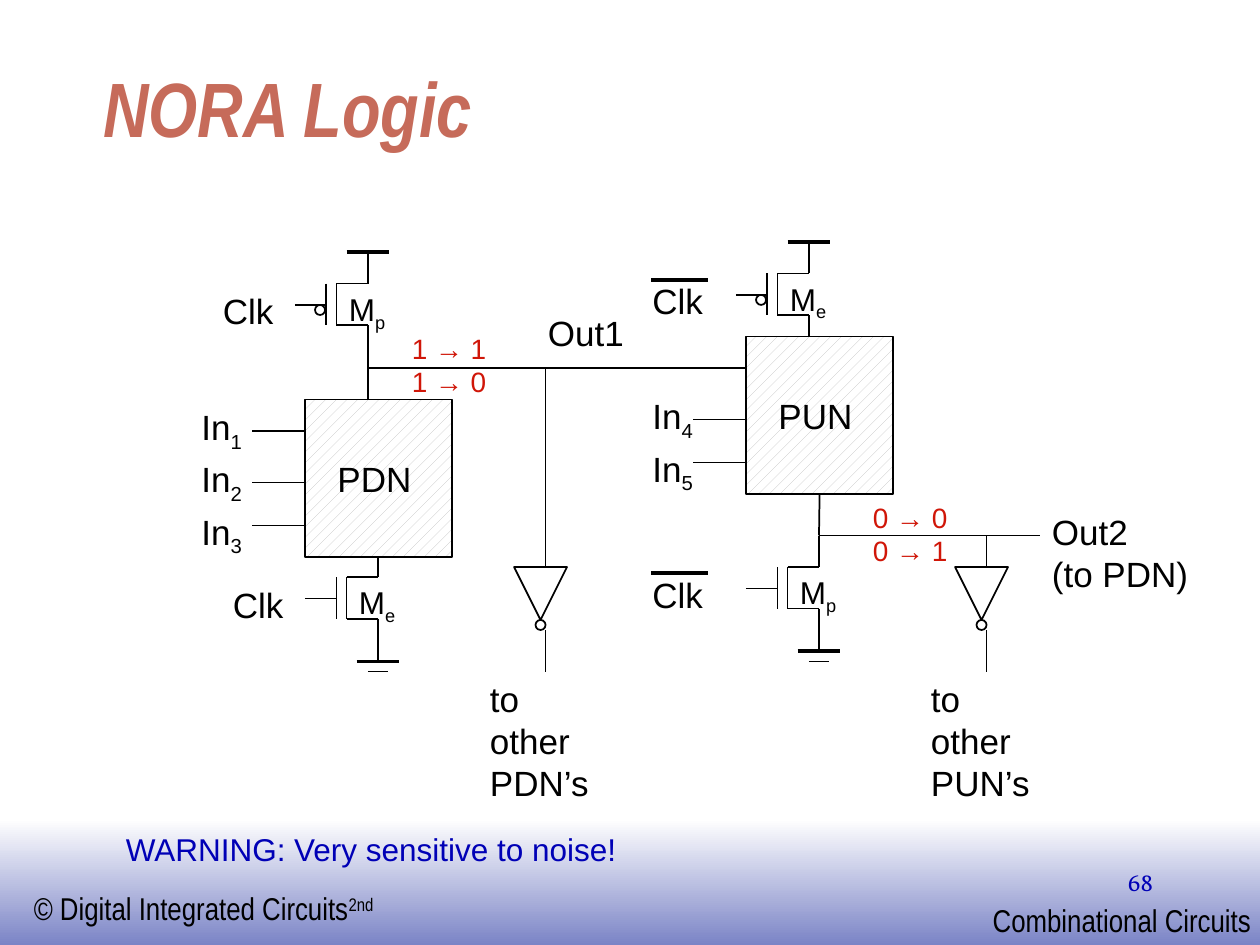
from dataclasses import dataclass

from lxml import etree
from pptx import Presentation
from pptx.dml.color import RGBColor
from pptx.enum.dml import MSO_PATTERN
from pptx.enum.shapes import MSO_CONNECTOR, MSO_SHAPE
from pptx.enum.text import MSO_ANCHOR, MSO_AUTO_SIZE, PP_ALIGN
from pptx.oxml.ns import qn
from pptx.util import Inches, Pt

RECT, OVAL, TRIANGLE = MSO_SHAPE.RECTANGLE, MSO_SHAPE.OVAL, MSO_SHAPE.ISOSCELES_TRIANGLE
STRAIGHT = MSO_CONNECTOR.STRAIGHT
DOTS = MSO_PATTERN.PERCENT_20
BOTTOM = MSO_ANCHOR.BOTTOM
FIT, FIXED = MSO_AUTO_SIZE.SHAPE_TO_FIT_TEXT, MSO_AUTO_SIZE.NONE
LEFT, RIGHT = PP_ALIGN.LEFT, PP_ALIGN.RIGHT


@dataclass(frozen=True)
class Theme:
    ink: str = "000000"
    paper: str = "FFFFFF"
    hatch: str = "C0C0C0"
    band: str = "7B84C6"
    coral: str = "C66B5A"
    red: str = "D01608"
    blue: str = "0000B6"
    sans: str = "Arial"
    narrow: str = "Arial Narrow"
    serif: str = "Vollkorn"
    head: int = 44
    label: int = 20
    note: int = 18
    logic: int = 16
    page: int = 14
    thin: float = 1
    thick: float = 2.25


class Sketch:
    """Draws circuit parts on the current slide in one style."""

    def __init__(self, slide, theme):
        self.slide, self.theme = slide, theme

    def run(self, para, text, size, color, font, base=0):
        run = para.add_run()
        run.text = text
        run.font.size, run.font.name = Pt(size), font
        run.font.color.rgb = RGBColor.from_string(color)
        if base:
            run.font._element.set("baseline", str(base * 1000))
        return run

    def title(self, text, x, y, w, h):
        shape, t = self.slide.shapes.title, self.theme
        shape.left, shape.top, shape.width, shape.height = map(Inches, (x, y, w, h))
        frame = shape.text_frame
        frame.vertical_anchor, frame.auto_size = BOTTOM, FIXED
        para = frame.paragraphs[0]
        para.alignment = LEFT
        run = self.run(para, text, t.head, t.coral, t.narrow)
        run.font.bold = run.font.italic = True

    def text(self, x, y, w, h, *lines, size=None, color=None, font=None,
             base=-25, wrap=False, align=LEFT):
        t = self.theme
        box = self.slide.shapes.add_textbox(*map(Inches, (x, y, w, h)))
        frame = box.text_frame
        frame.word_wrap = wrap
        frame.auto_size = FIXED if wrap else FIT
        for i, line in enumerate(lines):
            para = frame.add_paragraph() if i else frame.paragraphs[0]
            para.alignment = align
            main, _, shift = line.partition("_")
            style = size or t.label, color or t.ink, font or t.sans
            self.run(para, main, *style)
            if shift:
                self.run(para, shift, *style, base=base)

    def line(self, x1, y1, x2, y2, width=None, start=None):
        wire = self.slide.shapes.add_connector(STRAIGHT, *map(Inches, (x1, y1, x2, y2)))
        wire.line.width = Pt(width or self.theme.thin)
        wire.line.color.rgb = RGBColor.from_string(self.theme.ink)
        etree.SubElement(wire._element.spPr, qn("a:effectLst"))
        if start:
            wire.begin_connect(start, 2)

    def shape(self, kind, x, y, w, h):
        shape = self.slide.shapes.add_shape(kind, *map(Inches, (x, y, w, h)))
        shape.shadow.inherit = False
        shape.fill.background()
        shape.line.width = Pt(self.theme.thin)
        shape.line.color.rgb = RGBColor.from_string(self.theme.ink)
        return shape

    def band(self, x, y, w, h):
        shape = self.shape(RECT, x, y, w, h)
        shape.line.fill.background()
        shape.fill.gradient()
        shape.fill.gradient_angle = 270
        for stop, color in zip(shape.fill.gradient_stops, (self.theme.paper, self.theme.band)):
            stop.color.rgb = RGBColor.from_string(color)

    def block(self, x, y, name):
        shape = self.shape(RECT, x, y, 1.17, 1.25)
        shape.fill.patterned()
        shape.fill.pattern = DOTS
        shape.fill.fore_color.rgb = RGBColor.from_string(self.theme.hatch)
        shape.fill.back_color.rgb = RGBColor.from_string(self.theme.paper)
        self.text(x + 0.16, y + 0.41, 0.79, 0.43, name)
        return shape

    def gate(self, x, y, name, bubble=False):
        for x1, y1, x2, y2 in (
            (0, 0, 0.25, 0), (0, 0, 0, 0.33), (0, 0.33, 0.25, 0.33),
            (-0.08, 0, -0.08, 0.33), (0.25, 0.33, 0.25, 0.58),
            (-0.33, 0.17, -0.08, 0.17), (0.25, -0.25, 0.25, 0),
        ):
            self.line(x + x1, y + y1, x + x2, y + y2)
        if bubble:
            self.shape(OVAL, x - 0.17, y + 0.17, 0.08, 0.08)
        self.text(x, y, 0.5, 0.4, name, size=self.theme.note)

    def rail(self, x, y):
        self.line(x - 0.17, y, x + 0.17, y, self.theme.thick)

    def ground(self, x, y):
        self.rail(x, y)
        self.line(x - 0.08, y + 0.08, x + 0.08, y + 0.08)
        self.line(x, y - 0.25, x, y)

    def clock(self, x, y, bar=False):
        self.text(x, y, 0.6, 0.43, "Clk")
        if bar:
            self.line(x + 0.09, y + 0.05, x + 0.54, y + 0.05, self.theme.thick)

    def input(self, x, y, name, pin, end):
        self.text(x, y, 0.53, 0.43, name)
        self.line(end - 0.42, pin, end, pin)

    def invert(self, x, top, *lines):
        self.line(x, top, x, 4.5)
        self.shape(TRIANGLE, x - 0.25, 4.5, 0.42, 0.42).rotation = 180
        self.shape(OVAL, x - 0.08, 4.92, 0.08, 0.08)
        self.line(x, 5, x, 5.33)
        self.text(x - 0.54, 5.33, 1.14, 0.77, *lines)


def main():
    deck = Presentation()
    deck.slide_width, deck.slide_height = Inches(10), Inches(7.5)
    t = Theme()
    art = Sketch(deck.slides.add_slide(deck.slide_layouts[5]), t)

    art.band(0, 6.5, 10, 1)
    art.text(0.17, 7.01, 2.93, 0.4, "© Digital Integrated Circuits_2nd",
             size=t.note, font=t.narrow, base=30)
    art.text(7.78, 7.1, 2.25, 0.4, "Combinational Circuits", size=t.note, font=t.narrow)
    art.text(7.17, 6.83, 2.08, 0.5, "68", size=t.page, color=t.blue,
             font=t.serif, wrap=True, align=RIGHT)
    art.title("NORA Logic", 0.72, 0.48, 8.5, 0.78)

    for x, y, name, bubble in (
        (2.75, 4.58, "M_e", False), (2.67, 2.25, "M_p", True),
        (6.25, 4.5, "M_p", False), (6.17, 2.17, "M_e", True),
    ):
        art.gate(x, y, name, bubble)
    for x, y in ((2.92, 2), (6.42, 1.92)):
        art.rail(x, y)
    for x, y in ((3, 5.25), (6.5, 5.17)):
        art.ground(x, y)
    for x, y, bar in ((1.75, 4.58, False), (1.67, 2.25, False),
                      (5.08, 4.5, True), (5.08, 2.17, True)):
        art.clock(x, y, bar)

    art.block(2.42, 3.17, "PDN")
    pun = art.block(5.92, 2.67, "PUN")
    for x, y, name, pin, end in (
        (1.5, 3.17, "In_1", 3.42, 2.42), (1.5, 3.58, "In_2", 3.83, 2.42),
        (1.5, 4, "In_3", 4.17, 2.42), (5.08, 3.08, "In_4", 3.33, 5.92),
        (5.08, 3.5, "In_5", 3.67, 5.92),
    ):
        art.input(x, y, name, pin, end)

    art.line(2.92, 2.75, 2.92, 3.17)
    art.line(2.92, 2.92, 5.92, 2.92)
    art.line(6.5, 3.92, 6.5, 4.25, start=pun)
    art.line(6.5, 4.25, 8.25, 4.25)
    art.invert(4.33, 2.92, "to other", "PDN’s")
    art.invert(7.83, 4.25, "to other", "PUN’s")

    art.text(4.25, 2.42, 0.8, 0.43, "Out1")
    art.text(8.25, 4, 1.28, 0.77, "Out2", "(to PDN)")
    art.text(3.17, 2.58, 0.79, 0.64, "1 → 1", "1 → 0", size=t.logic, color=t.red)
    art.text(6.83, 3.92, 0.79, 0.64, "0 → 0", "0 → 1", size=t.logic, color=t.red)
    art.text(0.9, 6.54, 4.12, 0.4, "WARNING: Very sensitive to noise!",
             size=t.note, color=t.blue)
    deck.save("out.pptx")


if __name__ == "__main__":
    main()
